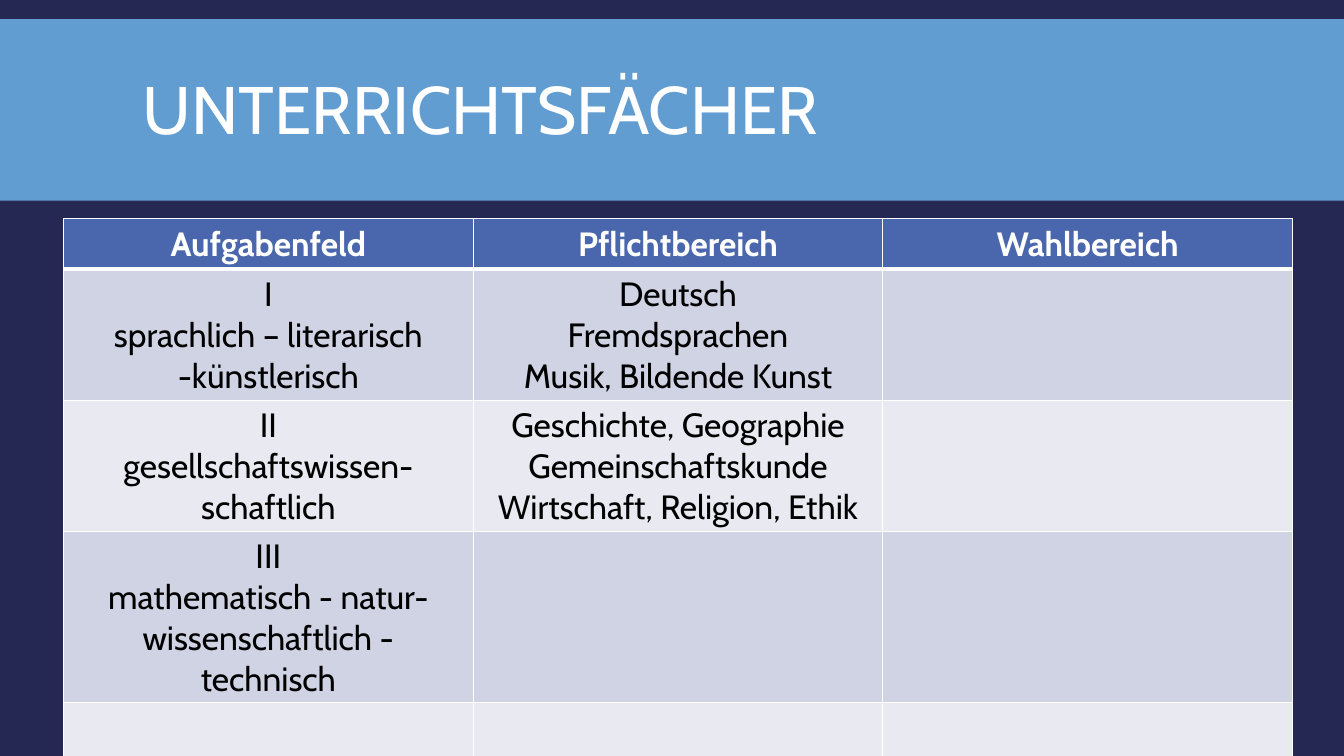
import pptx
import pptx.util
import pptx.dml.color
import pptx.enum.shapes
import pptx.enum.text
import pptx.oxml
import pptx.oxml.ns

Inches = pptx.util.Inches
Pt = pptx.util.Pt
RGBColor = pptx.dml.color.RGBColor

NAVY = RGBColor(0x24, 0x28, 0x52)
SKY = RGBColor(0x62, 0x9D, 0xD1)
BLUE = RGBColor(0x4A, 0x66, 0xAC)
DARK = RGBColor(0xD0, 0xD3, 0xE3)
LIGHT = RGBColor(0xE9, 0xEA, 0xF1)
WHITE = RGBColor(0xFF, 0xFF, 0xFF)
BLACK = RGBColor(0, 0, 0)
FONT = "Cabin"

ROWS = [
    (0.48, ["Aufgabenfeld", "Pflichtbereich", "Wahlbereich"]),
    (1.25, ["I\nsprachlich – literarisch -künstlerisch",
            "Deutsch\nFremdsprachen\nMusik, Bildende Kunst", ""]),
    (1.25, ["II\ngesellschaftswissen-schaftlich",
            "Geschichte, Geographie\nGemeinschaftskunde\n"
            "Wirtschaft, Religion, Ethik", ""]),
    (1.25, ["III\nmathematisch - natur-wissenschaftlich - technisch", "", ""]),
    (0.72, ["", "", ""]),
]


def style(para, size, color, bold=False):
    para.font.name = FONT
    para.font.size = Pt(size)
    para.font.bold = bold
    para.font.color.rgb = color


def add_title(slide, left, top, width, height):
    band = slide.shapes.add_shape(
        pptx.enum.shapes.MSO_SHAPE.RECTANGLE, left, top, width, height)
    band.shadow.inherit = False
    band.fill.solid()
    band.fill.fore_color.rgb = SKY
    band.line.fill.background()
    box = slide.shapes.add_textbox(
        left + Inches(1.32), top + Inches(0.12), Inches(9.74), Inches(1.65))
    frame = box.text_frame
    frame.word_wrap = True
    frame.vertical_anchor = pptx.enum.text.MSO_ANCHOR.MIDDLE
    para = frame.paragraphs[0]
    para.text = "UNTERRICHTSFÄCHER"
    para.line_spacing = 0.85
    style(para, 48, WHITE)


def add_edges(cell, base):
    props = cell._tc.get_or_add_tcPr()
    for side, width in (("L", 1), ("R", 1), ("T", 1), ("B", base)):
        props.append(pptx.oxml.parse_xml(
            f'<a:ln{side} {pptx.oxml.ns.nsdecls("a")} w="{Pt(width)}">'
            f'<a:solidFill><a:srgbClr val="{WHITE}"/></a:solidFill>'
            f'</a:ln{side}>'))


def fill_cell(cell, text, color, head):
    add_edges(cell, 3 if head else 1)
    cell.fill.solid()
    cell.fill.fore_color.rgb = color
    if not text:
        return
    cell.text = text
    for para in cell.text_frame.paragraphs:
        para.alignment = pptx.enum.text.PP_ALIGN.CENTER
        style(para, 24, WHITE if head else BLACK, head)


def add_grid(slide, left, top, width, height):
    count = len(ROWS[0][1])
    table = slide.shapes.add_table(
        len(ROWS), count, left, top, width, height).table
    for col in table.columns:
        col.width = width // count
    for r, (tall, texts) in enumerate(ROWS):
        table.rows[r].height = Inches(tall)
        color = BLUE if r == 0 else DARK if r % 2 else LIGHT
        for c, text in enumerate(texts):
            fill_cell(table.cell(r, c), text, color, r == 0)


def main():
    deck = pptx.Presentation()
    deck.slide_width = Inches(13.33)
    deck.slide_height = Inches(7.5)
    slide = deck.slides.add_slide(deck.slide_layouts[6])
    slide.background.fill.solid()
    slide.background.fill.fore_color.rgb = NAVY
    add_title(slide, 0, Inches(0.19), deck.slide_width, Inches(1.8))
    add_grid(slide, Inches(0.63), Inches(2.17), Inches(12.19), Inches(4.95))
    deck.save("out.pptx")


if __name__ == "__main__":
    main()
